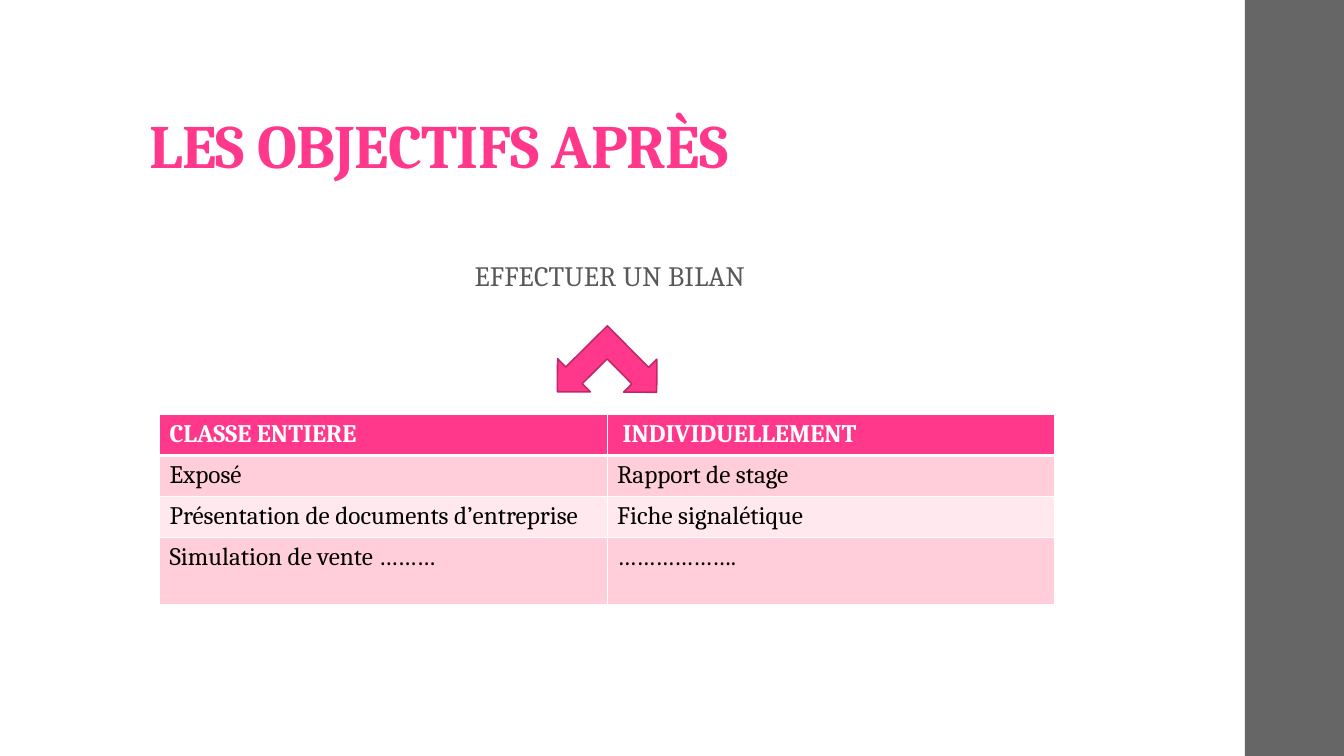
"""Build the slide on the goals that follow the internship."""
from dataclasses import dataclass

from lxml.etree import SubElement as Sub
from pptx import Presentation
from pptx.dml.color import RGBColor as Rgb
from pptx.enum.shapes import MSO_SHAPE as Kind
from pptx.enum.text import MSO_ANCHOR as Anchor, PP_ALIGN as Align
from pptx.oxml.ns import qn
from pptx.util import Cm, Pt


@dataclass(frozen=True)
class Theme:
    font: str = "Cambria"
    pink: str = "FF388C"
    edge: str = "BD2968"
    rose: str = "FFCEDA"
    pale: str = "FFE8EE"
    gray: str = "666666"
    ink: str = "595959"
    white: str = "FFFFFF"
    black: str = "000000"
    head: float = 44
    sub: float = 20
    body: float = 18


@dataclass(frozen=True)
class Box:
    left: float
    top: float
    wide: float
    high: float

    def place(self) -> tuple:
        return Cm(self.left), Cm(self.top), Cm(self.wide), Cm(self.high)


@dataclass(frozen=True)
class Form:
    kind: Kind
    box: Box
    fill: str
    edge: str = ""
    turn: float = 0


@dataclass(frozen=True)
class Row:
    cells: tuple
    high: float
    fill: str
    ink: str = "000000"
    bold: bool = False
    top: float = 1
    base: float = 1


LOOK = Theme()
FORMS = (
    Form(Kind.RECTANGLE, Box(31.37, 0, 2.5, 19.05), LOOK.gray),
    Form(Kind.LEFT_UP_ARROW, Box(14.12, 8.28, 2.36, 2.36), LOOK.pink, LOOK.edge, 225.3),
)
ROWS = (
    Row(("CLASSE ENTIERE", " INDIVIDUELLEMENT"), 1.03, LOOK.pink, LOOK.white, True, base=3),
    Row(("Exposé", "Rapport de stage"), 1.03, LOOK.rose, top=3),
    Row(("Présentation de documents d’entreprise", "Fiche signalétique"), 1.03, LOOK.pale),
    Row(("Simulation de vente ………", "………………."), 1.7, LOOK.rose),
)
TITLE = Box(3.51, 0.74, 26.92, 3.96)
GOAL = Box(3.51, 6.39, 23.88, 1.2)
GRID = Box(4.02, 10.45, 22.56, 4.79)


def write(para, text: str, size: float, ink: str, bold: bool = False, gap: int = 0) -> None:
    """Add one styled run to a paragraph."""
    run = para.add_run()
    run.text = text
    font = run.font
    font.name, font.size, font.bold = LOOK.font, Pt(size), bold
    font.color.rgb = Rgb.from_string(ink)
    if gap:
        font._element.set("spc", str(gap))


def draw(slide, form: Form) -> None:
    """Draw one filled preset shape."""
    shape = slide.shapes.add_shape(form.kind, *form.box.place())
    shape.shadow.inherit = False
    shape.rotation = form.turn
    shape.fill.solid()
    shape.fill.fore_color.rgb = Rgb.from_string(form.fill)
    if form.edge:
        shape.line.color.rgb = Rgb.from_string(form.edge)
        shape.line.width = Pt(1.1)
    else:
        shape.line.fill.background()


def rule(cell, side: str, width: float) -> None:
    """Give a cell a white border on one side."""
    line = Sub(cell._tc.get_or_add_tcPr(), qn(f"a:ln{side}"), w=str(Pt(width)))
    Sub(Sub(line, qn("a:solidFill")), qn("a:srgbClr"), val=LOOK.white)


def tile(cell, text: str, row: Row) -> None:
    """Fill, border and letter one table cell."""
    for side, width in (("L", 1), ("R", 1), ("T", row.top), ("B", row.base)):
        rule(cell, side, width)
    cell.fill.solid()
    cell.fill.fore_color.rgb = Rgb.from_string(row.fill)
    write(cell.text_frame.paragraphs[0], text, LOOK.body, row.ink, row.bold)


def table(slide) -> None:
    """Lay out the table of tasks."""
    cols = len(ROWS[0].cells)
    grid = slide.shapes.add_table(len(ROWS), cols, *GRID.place()).table
    for col in grid.columns:
        col.width = Cm(GRID.wide / cols)
    for line, row in zip(grid.rows, ROWS):
        line.height = Cm(row.high)
        for cell, text in zip(line.cells, row.cells):
            tile(cell, text, row)


def title(slide) -> None:
    """Place and style the title."""
    shape = slide.shapes.title
    shape.left, shape.top, shape.width, shape.height = TITLE.place()
    frame = shape.text_frame
    frame.vertical_anchor = Anchor.BOTTOM
    frame.margin_top, frame.margin_bottom = Cm(0.08), Cm(0.13)
    para = frame.paragraphs[0]
    para.alignment, para.line_spacing = Align.LEFT, 0.9
    write(para, "LES OBJECTIFS APRÈS", LOOK.head, LOOK.pink, True, -50)


def goal(slide) -> None:
    """Add the centred line above the arrow."""
    frame = slide.shapes.add_textbox(*GOAL.place()).text_frame
    frame.word_wrap = True
    frame.vertical_anchor = Anchor.MIDDLE
    para = frame.paragraphs[0]
    para.alignment, para.line_spacing = Align.CENTER, 0.95
    write(para, "EFFECTUER UN BILAN ", LOOK.sub, LOOK.ink, gap=10)


def main() -> None:
    """Build and save the deck."""
    deck = Presentation()
    deck.slide_width, deck.slide_height = Cm(33.87), Cm(19.05)
    slide = deck.slides.add_slide(deck.slide_layouts[5])
    title(slide)
    goal(slide)
    for form in FORMS:
        draw(slide, form)
    table(slide)
    deck.save("out.pptx")


if __name__ == "__main__":
    main()
